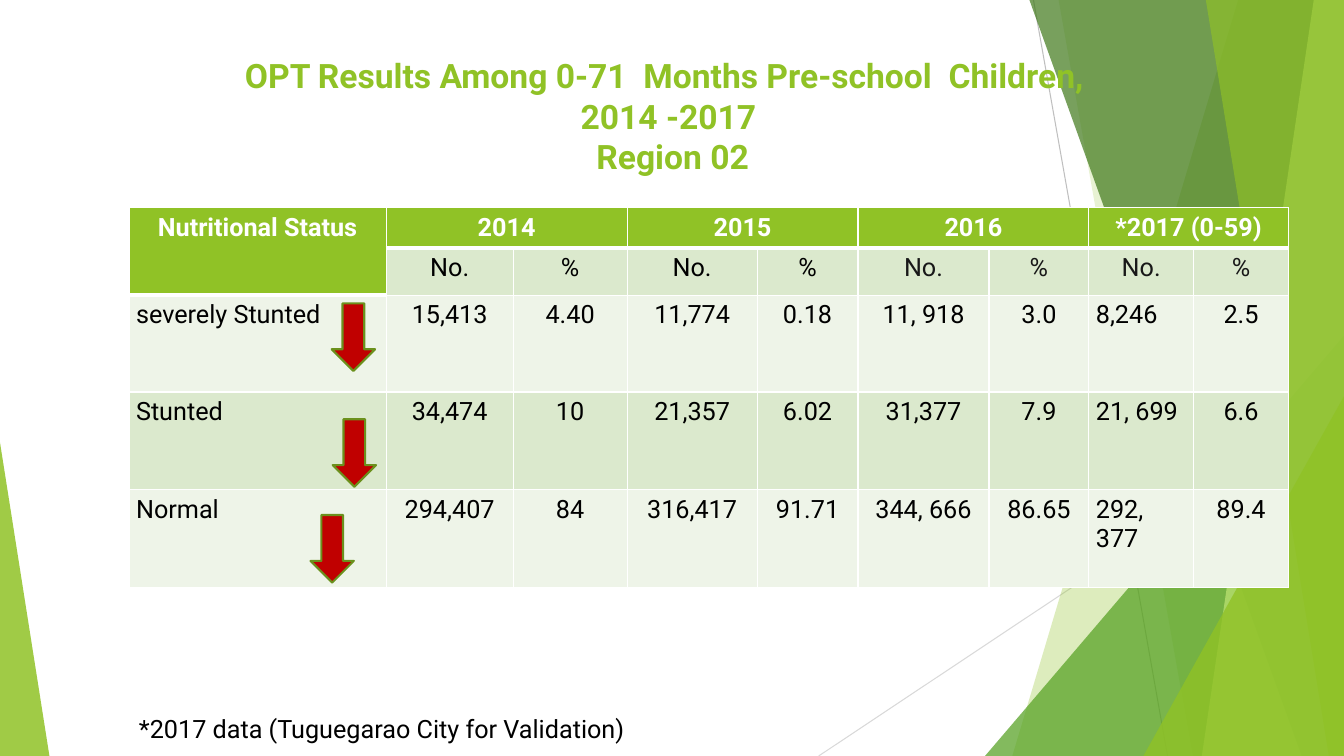
from dataclasses import dataclass

from lxml import etree
from pptx import Presentation
from pptx.dml.color import RGBColor
from pptx.enum.shapes import MSO_CONNECTOR, MSO_SHAPE
from pptx.enum.text import MSO_ANCHOR, MSO_AUTO_SIZE, PP_ALIGN
from pptx.oxml.ns import qn
from pptx.util import Inches, Pt

STRAIGHT = MSO_CONNECTOR.STRAIGHT
TRIANGLE = MSO_SHAPE.ISOSCELES_TRIANGLE
DOWN_ARROW = MSO_SHAPE.DOWN_ARROW
CENTER, LEFT = PP_ALIGN.CENTER, PP_ALIGN.LEFT
TOP = MSO_ANCHOR.TOP
GROW = MSO_AUTO_SIZE.SHAPE_TO_FIT_TEXT

WIDTH, HEIGHT = 13.33, 7.5
FONT = "Roboto"
COLORS = {
    "lime": "90C226", "green": "54A021", "forest": "3F7819", "pale": "C0E474",
    "arrow": "C00000", "arrow_edge": "6B901C", "dark_band": "DBE9CD",
    "light_band": "EEF4E8", "white": "FFFFFF", "black": "000000",
    "soft_black": "181818", "ray": "BFBFBF", "light_ray": "D9D9D9",
}


@dataclass(frozen=True)
class Ray:
    start: tuple[float, float]
    end: tuple[float, float]
    color: str


@dataclass(frozen=True)
class Facet:
    top_x: float
    bottom_x: float
    color: str
    opacity: int


@dataclass(frozen=True)
class Wedge:
    left: float
    top: float
    width: float
    apex: float
    color: str
    opacity: int


@dataclass(frozen=True)
class Trend:
    left: float
    top: float


RAYS = [
    Ray((10.25, 0), (11.58, HEIGHT), "ray"),
    Ray((WIDTH, 4.03), (8.12, HEIGHT), "light_ray"),
]
DECORATION = [
    Facet(12.28, 10.04, "lime", 30),
    Facet(10.5, 11.83, "lime", 20),
    Wedge(9.77, 3.33, 3.56, 1, "green", 72),
    Facet(10.21, 12.91, "forest", 70),
    Facet(13.03, 11.92, "pale", 70),
    Facet(11.96, 13.18, "lime", 65),
    Wedge(11.34, 3.93, 1.99, 1, "lime", 80),
    Wedge(0, 4.39, 0.49, 0, "lime", 85),
]
TRENDS = [Trend(3.29, 3.01), Trend(3.08, 5.11), Trend(3.3, 4.16)]

TITLE = ["OPT Results Among 0-71  Months Pre-school  Children, ", "2014 -2017", " Region 02"]
FOOTNOTE = "*2017 data (Tuguegarao City for Validation)"
YEARS = ["2014", "2015", "2016", "*2017 (0-59)"]
RESULTS = [
    ["Nutritional Status"] + [text for year in YEARS for text in (year, "")],
    [""] + ["No.", "%"] * len(YEARS),
    ["severely Stunted", "15,413", "4.40", "11,774", "0.18", "11, 918", "3.0", "8,246", "2.5"],
    ["Stunted", "34,474", "10", "21,357", "6.02", "31,377", "7.9", "21, 699", "6.6"],
    ["Normal", "294,407", "84", "316,417", "91.71", "344, 666", "86.65", "292, 377", "89.4"],
]
COLUMN_WIDTHS = [2.55, 1.26, 1.13, 1.29, 1, 1.3, 0.99, 1.04, 0.94]
ROW_HEIGHTS = [0.39, 0.47, 0.96, 0.97, 0.97]


def rgb(name: str) -> RGBColor:
    return RGBColor.from_string(COLORS[name])


def add_run(paragraph, text: str, size: int, color: str, bold: bool = False) -> None:
    run = paragraph.add_run()
    run.text = text
    run.font.name = FONT
    run.font.size = Pt(size)
    run.font.bold = bold
    run.font.color.rgb = rgb(color)


def draw_ray(slide, ray: Ray) -> None:
    ends = [Inches(value) for value in ray.start + ray.end]
    line = slide.shapes.add_connector(STRAIGHT, *ends)
    line.line.color.rgb = rgb(ray.color)
    line.line.width = Pt(0.75)
    etree.SubElement(line._element.spPr, qn("a:effectLst"))


def paint_glass(piece, color: str, opacity: int) -> None:
    piece.shadow.inherit = False
    piece.line.fill.background()
    piece.fill.solid()
    piece.fill.fore_color.rgb = rgb(color)
    tint = piece._element.spPr.find(f"{qn('a:solidFill')}/{qn('a:srgbClr')}")
    etree.SubElement(tint, qn("a:alpha")).set("val", str(opacity * 1000))


def draw_facet(slide, facet: Facet) -> None:
    corners = [(facet.top_x, 0), (WIDTH, 0), (WIDTH, HEIGHT), (facet.bottom_x, HEIGHT)]
    points = [(Inches(x), Inches(y)) for x, y in corners]
    outline = slide.shapes.build_freeform(*points[0])
    outline.add_line_segments(points[1:], close=True)
    paint_glass(outline.convert_to_shape(), facet.color, facet.opacity)


def draw_wedge(slide, wedge: Wedge) -> None:
    triangle = slide.shapes.add_shape(
        TRIANGLE, Inches(wedge.left), Inches(wedge.top),
        Inches(wedge.width), Inches(HEIGHT - wedge.top))
    triangle.adjustments[0] = wedge.apex
    paint_glass(triangle, wedge.color, wedge.opacity)


def draw_trend(slide, trend: Trend) -> None:
    arrow = slide.shapes.add_shape(
        DOWN_ARROW, Inches(trend.left), Inches(trend.top), Inches(0.43), Inches(0.67))
    arrow.shadow.inherit = False
    arrow.fill.solid()
    arrow.fill.fore_color.rgb = rgb("arrow")
    arrow.line.color.rgb = rgb("arrow_edge")
    arrow.line.width = Pt(1.5)


def draw_title(slide) -> None:
    frame = slide.shapes.add_textbox(
        Inches(1.92), Inches(0.5), Inches(9.42), Inches(1.25)).text_frame
    frame.word_wrap = True
    frame.vertical_anchor = TOP
    heading = frame.paragraphs[0]
    heading.alignment = CENTER
    for index, text in enumerate(TITLE):
        if index:
            heading.add_line_break()
        add_run(heading, text, 24, "lime", bold=True)


def draw_footnote(slide) -> None:
    frame = slide.shapes.add_textbox(
        Inches(1.28), Inches(7.03), Inches(5.63), Inches(0.4)).text_frame
    frame.word_wrap = True
    frame.auto_size = GROW
    add_run(frame.paragraphs[0], FOOTNOTE, 18, "black")


def is_header(row: int, column: int) -> bool:
    return row == 0 or (row == 1 and column == 0)


def set_borders(cell, top: int, bottom: int) -> None:
    properties = cell._tc.get_or_add_tcPr()
    for side, width in (("L", 1), ("R", 1), ("T", top), ("B", bottom)):
        border = etree.SubElement(properties, qn(f"a:ln{side}"), w=str(Pt(width)))
        fill = etree.SubElement(border, qn("a:solidFill"))
        etree.SubElement(fill, qn("a:srgbClr"), val=COLORS["white"])


def fill_cell(cell, row: int, column: int, text: str) -> None:
    header = is_header(row, column)
    below_header = row > 0 and is_header(row - 1, column)
    set_borders(cell, 3 if below_header else 1, 3 if header else 1)
    band = "dark_band" if row % 2 else "light_band"
    cell.fill.solid()
    cell.fill.fore_color.rgb = rgb("lime" if header else band)
    cell.margin_left = cell.margin_right = Inches(0.07)
    cell.margin_top = cell.margin_bottom = Inches(0.05)
    if text:
        paragraph = cell.text_frame.paragraphs[0]
        paragraph.alignment = LEFT if row > 1 and column in (0, 7) else CENTER
        late_subheading = row == 1 and column >= 5
        color = "white" if header else "soft_black" if late_subheading else "black"
        add_run(paragraph, text, 18, color, bold=header)


def draw_results(slide) -> None:
    table = slide.shapes.add_table(
        len(ROW_HEIGHTS), len(COLUMN_WIDTHS), Inches(1.28), Inches(2.06),
        Inches(sum(COLUMN_WIDTHS)), Inches(sum(ROW_HEIGHTS))).table
    for column, width in zip(table.columns, COLUMN_WIDTHS):
        column.width = Inches(width)
    for row, height in zip(table.rows, ROW_HEIGHTS):
        row.height = Inches(height)
    for row, texts in enumerate(RESULTS):
        for column, text in enumerate(texts):
            fill_cell(table.cell(row, column), row, column, text)
    table.cell(0, 0).merge(table.cell(1, 0))
    for column in range(1, len(COLUMN_WIDTHS), 2):
        table.cell(0, column).merge(table.cell(0, column + 1))


def main() -> None:
    deck = Presentation()
    deck.slide_width, deck.slide_height = Inches(WIDTH), Inches(HEIGHT)
    slide = deck.slides.add_slide(deck.slide_layouts[6])
    for ray in RAYS:
        draw_ray(slide, ray)
    for piece in DECORATION:
        if isinstance(piece, Facet):
            draw_facet(slide, piece)
        else:
            draw_wedge(slide, piece)
    draw_title(slide)
    draw_results(slide)
    for trend in TRENDS:
        draw_trend(slide, trend)
    draw_footnote(slide)
    deck.save("out.pptx")


if __name__ == "__main__":
    main()
